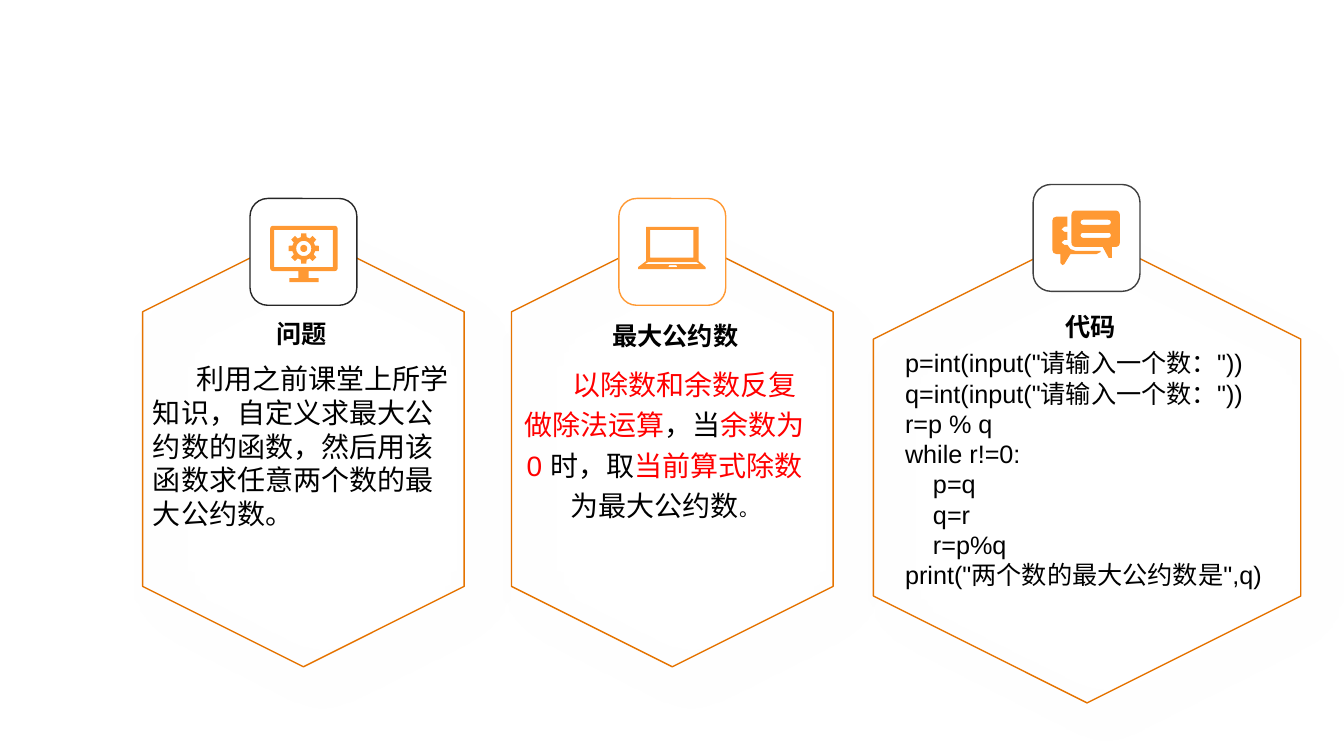
from math import cos, radians, sin

from lxml import etree
from pptx import Presentation
from pptx.dml.color import RGBColor
from pptx.enum.shapes import MSO_SHAPE
from pptx.enum.text import MSO_AUTO_SIZE, PP_ALIGN
from pptx.oxml.ns import qn
from pptx.util import Pt

HEXAGON = MSO_SHAPE.HEXAGON
ROUNDED = MSO_SHAPE.ROUNDED_RECTANGLE
CENTER = PP_ALIGN.CENTER
FIT_SHAPE = MSO_AUTO_SIZE.SHAPE_TO_FIT_TEXT

BLACK = RGBColor(0x00, 0x00, 0x00)
WHITE = RGBColor(0xFF, 0xFF, 0xFF)
RED = RGBColor(0xFF, 0x00, 0x00)
ORANGE = RGBColor(0xFF, 0x99, 0x33)
DARK_ORANGE = RGBColor(0xE5, 0x73, 0x00)
CHARCOAL = RGBColor(0x26, 0x26, 0x26)
GREY = RGBColor(0x40, 0x40, 0x40)

FONT = "Arial"
TILE_SIZE = 76.3

PROBLEM = [("利用之前课堂上所学知识，自定义求最大公约数的函数，"
            "然后用该函数求任意两个数的最大公约数。", 20, RED and BLACK)]
METHOD = [
    ("以除数和余数反复做除法运算", 20, RED),
    ("，当", 20, BLACK),
    ("余数为 0 ", 20, RED),
    ("时，取", 20, BLACK),
    ("当前算式除数", 20, RED),
    ("为最大公约数", 20, BLACK),
    ("。", 14, BLACK),
]
CODE = """p=int(input("请输入一个数："))
q=int(input("请输入一个数："))
r=p % q
while r!=0:
    p=q
    q=r
    r=p%q
print("两个数的最大公约数是",q)"""


# Outlines for the icons, as lists of points
def arc(x, y, radius, start, end, steps):
    angles = [radians(start + (end - start) * i / steps) for i in range(steps + 1)]
    return [(x + radius * cos(a), y + radius * sin(a)) for a in angles]


def circle(x, y, radius):
    return arc(x, y, radius, 0, 360, 32)


def box(left, top, right, bottom):
    return [(left, top), (right, top), (right, bottom), (left, bottom)]


def rounded_box(left, top, right, bottom, radius):
    inner = box(left + radius, top + radius, right - radius, bottom - radius)
    points = []
    for corner, (x, y) in enumerate(inner):
        points += arc(x, y, radius, 180 + 90 * corner, 270 + 90 * corner, 6)
    return points


def gear(x, y, root, tip, teeth):
    points = []
    for tooth in range(teeth):
        middle = 360 * tooth / teeth
        for turn, radius in ((-14, root), (-10, tip), (10, tip), (14, root)):
            points += arc(x, y, radius, middle + turn, middle + turn, 1)[:1]
    return points


MONITOR = [
    rounded_box(0, 0, 48.2, 32.4, 2.2),
    box(2.9, 2.9, 44.9, 29.5),
    gear(24, 16.2, 8.3, 11, 8),
    circle(24, 16.2, 5.4),
    circle(24, 16.2, 2.5),
    [(20.2, 32.4), (27.4, 32.4), (27.4, 37.4), (34.6, 37.4),
     (34.6, 40.3), (13.7, 40.3), (13.7, 37.4), (20.2, 37.4)],
]
LAPTOP = [
    [(43.2, 24.5), (43.2, 0), (5.8, 0), (5.8, 24.5),
     (0, 28.8), (0, 30.2), (48.2, 30.2), (48.2, 28.8)],
    box(8.6, 2.2, 39.6, 22),
    [(21.6, 28.8), (22.3, 27.4), (27.4, 27.4), (28.1, 28.8)],
    [(5, 26.6), (7.2, 25.2), (41.8, 25.2), (43.9, 26.6)],
]
CHAT = [
    rounded_box(13.7, 0, 48.2, 25.9, 2.9),
    rounded_box(20.2, 6.5, 41.8, 10.1, 1.7),
    rounded_box(20.2, 15.8, 41.8, 19.4, 1.7),
    [(36, 25.9), (42.5, 25.9), (42.5, 33.8), (40.3, 33.8)],
    [(2.9, 4.3), (10.8, 4.3), (10.8, 11.5), (8.6, 11.5), (6.5, 13.3),
     (8.6, 15.1), (10.8, 15.1), (10.8, 20.9), (8.6, 20.9), (6.5, 22.7),
     (8.6, 24.5), (10.8, 24.5), (13, 27.5), (16.6, 28.8), (34.6, 28.8),
     (34.6, 29.5), (31.7, 31), (13, 31), (8.6, 38.2), (7.2, 38.9),
     (5.8, 37.5), (5.8, 31), (2.9, 31), (0.8, 30.2), (0, 28), (0, 7.2),
     (0.8, 5.1)],
]


def add_soft_shadow(shape):
    effects = shape._element.spPr.find(qn("a:effectLst"))
    shadow = etree.SubElement(effects, qn("a:outerShdw"), blurRad=str(Pt(32)),
                              dist=str(Pt(19)), dir="2700000", rotWithShape="0")
    color = etree.SubElement(shadow, qn("a:srgbClr"), val="000000")
    etree.SubElement(color, qn("a:alpha"), val="14000")


def add_hexagon(slide, center_x, center_y, width, height):
    # The hexagon stands on its point, so its frame is turned a quarter
    shape = slide.shapes.add_shape(
        HEXAGON, Pt(center_x - height / 2), Pt(center_y - width / 2), Pt(height), Pt(width))
    shape.rotation = 90
    shape.fill.background()
    shape.line.color.rgb = DARK_ORANGE
    shape.line.width = Pt(1)
    shape.shadow.inherit = False
    add_soft_shadow(shape)


def add_tile(slide, left, top, line_color):
    shape = slide.shapes.add_shape(ROUNDED, Pt(left), Pt(top), Pt(TILE_SIZE), Pt(TILE_SIZE))
    shape.fill.solid()
    shape.fill.fore_color.rgb = WHITE
    shape.line.color.rgb = line_color
    shape.line.width = Pt(1)
    shape.shadow.inherit = False


def add_icon(slide, left, top, outlines):
    builder = None
    for outline in outlines:
        points = [((left + x) * 10, (top + y) * 10) for x, y in outline]
        if builder is None:
            builder = slide.shapes.build_freeform(*points[0], scale=Pt(0.1))
        else:
            builder.move_to(*points[0])
        builder.add_line_segments(points[1:], close=True)
    shape = builder.convert_to_shape()
    shape.fill.solid()
    shape.fill.fore_color.rgb = ORANGE
    shape.line.fill.background()
    shape.shadow.inherit = False


def add_text(slide, frame, paragraphs, align=None, spacing=None, indent=0, bold=False):
    text_box = slide.shapes.add_textbox(*[Pt(length) for length in frame])
    text_frame = text_box.text_frame
    text_frame.word_wrap = True
    text_frame.auto_size = FIT_SHAPE
    for index, runs in enumerate(paragraphs):
        paragraph = text_frame.add_paragraph() if index else text_frame.paragraphs[0]
        paragraph.alignment = align
        paragraph.line_spacing = spacing
        if indent:
            properties = paragraph._p.get_or_add_pPr()
            properties.set("marL", "0")
            properties.set("indent", str(Pt(indent)))
        for text, size, color in runs:
            run = paragraph.add_run()
            run.text = text
            run.font.name = FONT
            run.font.size = Pt(size)
            run.font.color.rgb = color
            run.font.bold = bold


def add_heading(slide, center_x, top, text):
    add_text(slide, (center_x - 92, top, 184, 31), [[(text, 18, BLACK)]],
             align=CENTER, spacing=1.2, bold=True)


def main():
    presentation = Presentation()
    presentation.slide_width = Pt(960)
    presentation.slide_height = Pt(540)
    slide = presentation.slides.add_slide(presentation.slide_layouts[6])

    # Problem
    add_hexagon(slide, 216.7, 320.8, 229.7, 311)
    add_tile(slide, 178.6, 141.8, CHARCOAL)
    add_icon(slide, 193, 161.3, MONITOR)
    add_heading(slide, 215.3, 219.6, "问题")
    add_text(slide, (102.2, 254.9, 229.7, 128.2), [PROBLEM], indent=31)

    # Greatest common divisor
    add_hexagon(slide, 480.2, 320.8, 229.7, 311)
    add_tile(slide, 442.1, 141.8, ORANGE)
    add_icon(slide, 455.8, 162, LAPTOP)
    add_heading(slide, 482.4, 221, "最大公约数")
    add_text(slide, (365, 254.2, 219.6, 123.8), [METHOD],
             align=CENTER, spacing=1.2, indent=28)

    # Code
    add_hexagon(slide, 776.5, 334, 305.3, 336.2)
    add_tile(slide, 738, 131.8, GREY)
    add_icon(slide, 751.7, 150.5, CHAT)
    add_heading(slide, 779, 214.6, "代码")
    add_text(slide, (639.4, 244.8, 277.9, 181.4),
             [[(line, 18, BLACK)] for line in CODE.splitlines()])

    presentation.save("out.pptx")


if __name__ == "__main__":
    main()
